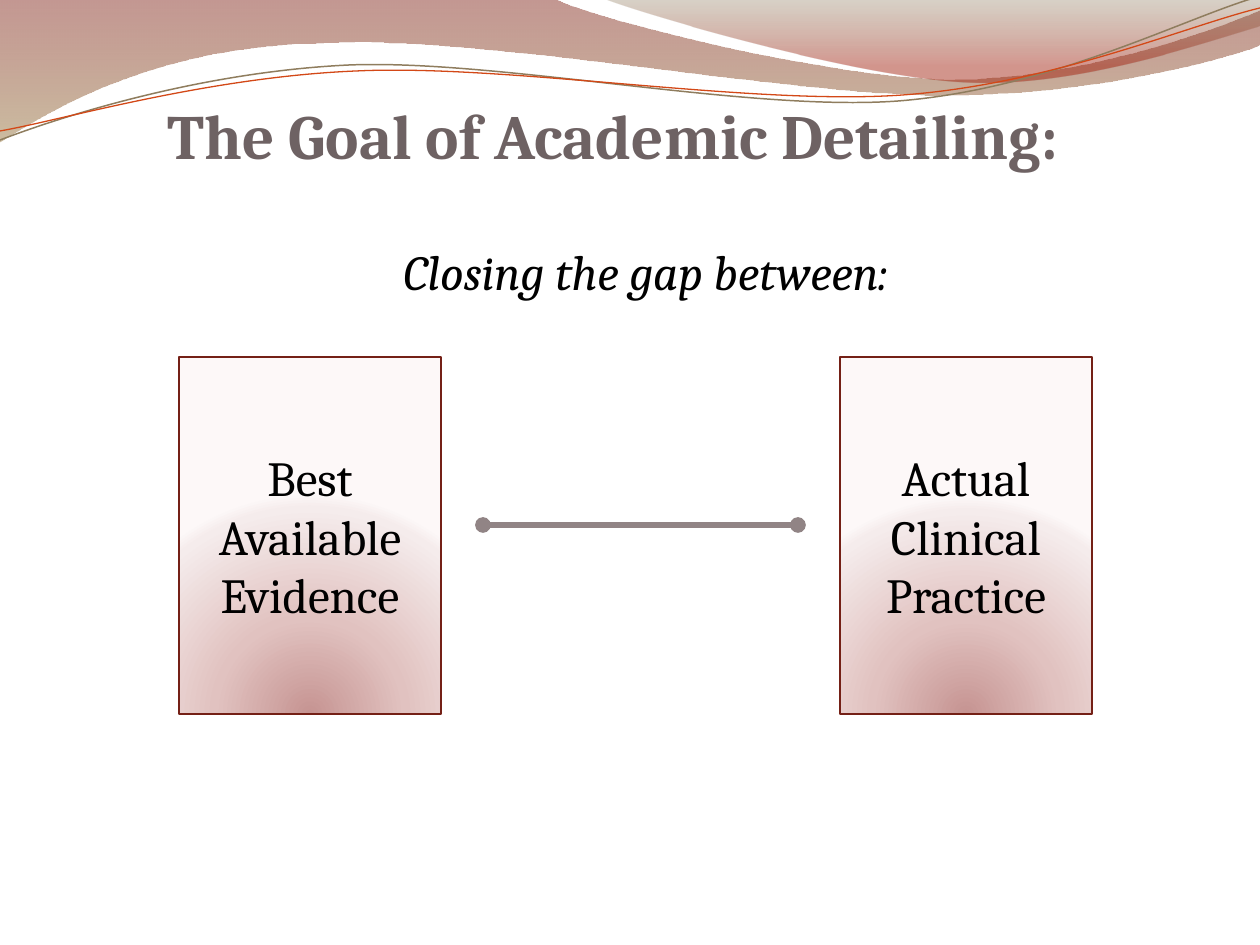
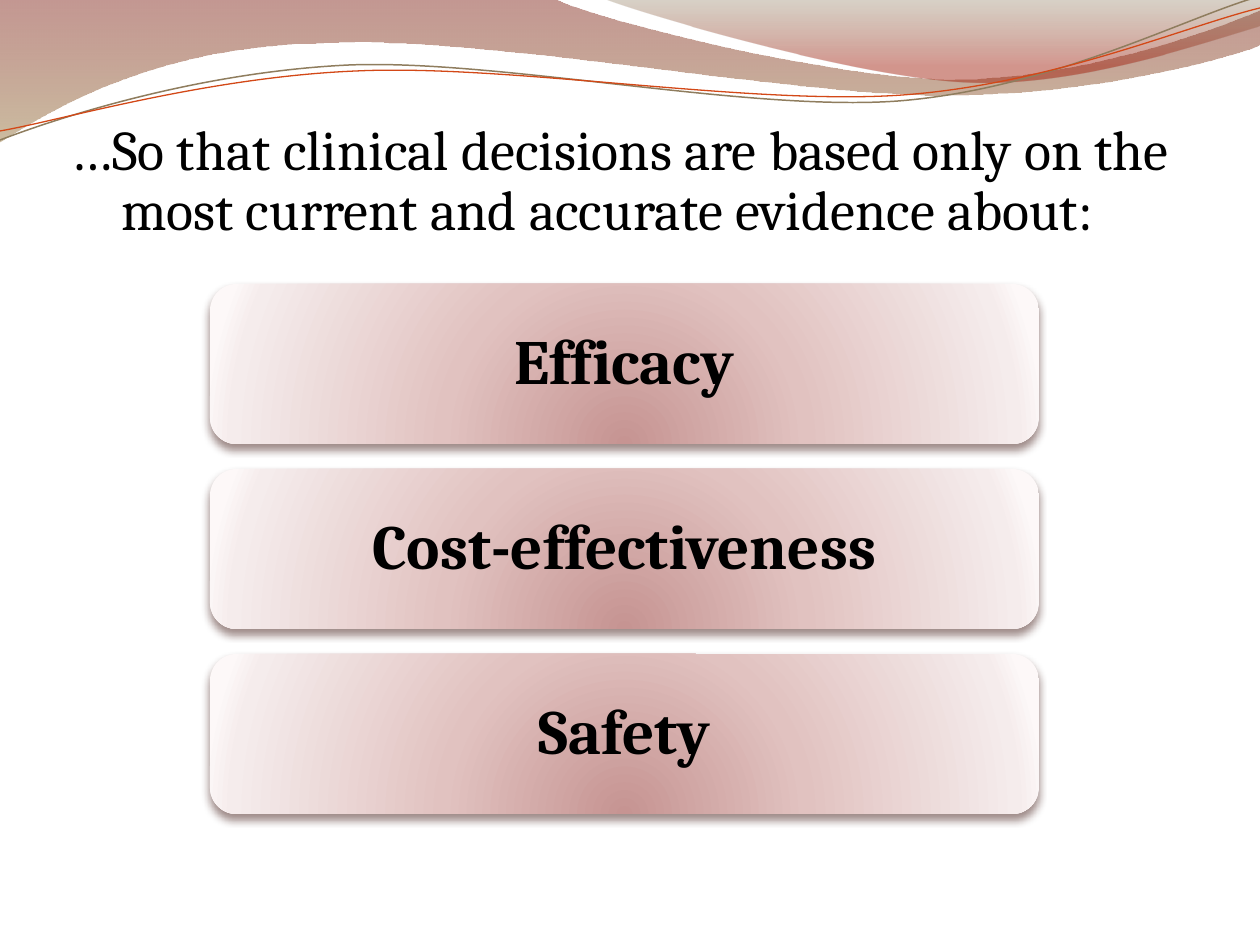
from pptx import Presentation
from pptx.dml.color import RGBColor
from pptx.enum.shapes import MSO_CONNECTOR, MSO_SHAPE
from pptx.enum.text import MSO_ANCHOR, PP_ALIGN
from pptx.oxml import parse_xml
from pptx.oxml.ns import nsdecls, qn
from pptx.util import Emu, Pt

RECTANGLE, ROUNDED = MSO_SHAPE.RECTANGLE, MSO_SHAPE.ROUNDED_RECTANGLE
STRAIGHT = MSO_CONNECTOR.STRAIGHT
LEFT, CENTER = PP_ALIGN.LEFT, PP_ALIGN.CENTER
TOP, MIDDLE, BOTTOM = MSO_ANCHOR.TOP, MSO_ANCHOR.MIDDLE, MSO_ANCHOR.BOTTOM

# Content
GOAL = {
    "title": "The Goal of Academic Detailing:",
    "lead": "Closing the gap between: ",
    "sides": [  # text, left, width
        ("Best Available Evidence", 179, 262),
        ("Actual Clinical Practice", 840, 252),
    ],
}
DECISIONS = {
    "lead": "…So that clinical decisions are based only on the "
            "most current and accurate evidence about: ",
    "topics": ["Efficacy", "Cost-effectiveness", "Safety"],
}

# Theme: colours, type, gradients as (position %, colour, opacity %)
THEME = {
    "font": "Cambria",
    "title": {"size": Pt(36), "bold": True, "color": "6E6263"},
    "subtitle": {"size": Pt(28), "italic": True, "color": "000000"},
    "lead": {"size": Pt(32), "color": "000000"},
    "side": {"size": Pt(28), "color": "000000"},
    "topic": {"size": Pt(36), "bold": True, "color": "000000"},
    "outline": "742016",
    "gap": "918485",
    "shadow": ("370F0A", 48),
    "glow": [(0, "C69492", 100), (43, "E1C2C0", 100),
             (93, "F5ECEC", 100), (100, "FDF8F8", 100)],
    "wide_wave": [(0, "7C1A0E", 45), (100, "A18552", 55)],
    "corner_wave": [(0, "7E6B48", 30), (80, "9F1705", 45)],
}
DOWNWARD = '<a:lin ang="5400000" scaled="1"/>'
FROM_BASE = ('<a:path path="circle"><a:fillToRect l="50000" t="130000" '
             'r="50000" b="-30000"/></a:path>')

# Waves: a start point, then segments of one point (line) or three (curve)
WAVES = [
    ("wide_wave", (0, 0), [
        [(554, -1)],
        [(600, 21), (837, 79), (955, 79)],
        [(1075, 79), (1207, 33), (1260, 11)],
        [(1261, 45)],
        [(1239, 55), (1096, 96), (940, 95)],
        [(784, 95), (481, 35), (324, 43)],
        [(163, 45), (58, 105), (-1, 142)],
    ]),
    ("corner_wave", (604, -1), [
        [(641, 14), (859, 78), (969, 82)],
        [(1079, 87), (1211, 40), (1260, 26)],
        [(1260, 0)],
    ]),
]
STRANDS = [
    ("8F7D5E", 0.85, (0, 140), [
        [(60, 117), (199, 72), (349, 65)],
        [(498, 59), (747, 112), (898, 101)],
        [(1050, 89), (1182, 19), (1257, -3)],
    ]),
    ("D34817", 0.75, (0, 131), [
        [(59, 121), (207, 77), (357, 71)],
        [(508, 64), (752, 106), (903, 95)],
        [(1053, 84), (1186, 26), (1260, 8)],
    ]),
]

# Layout in px
PX = 914400 / 126
SLIDE_W, SLIDE_H = 1260, 945
SIDE_TOP, SIDE_H = 357, 357
GAP_LEFT, GAP_RIGHT, GAP_Y = 483, 798, 525
TOPIC_LEFT, TOPIC_TOP, TOPIC_W, TOPIC_H, TOPIC_PITCH = 210, 284, 829, 160, 185


def px(value):
    return Emu(round(value * PX))


def rgb(color):
    return RGBColor.from_string(color)


def color_xml(color, opacity):
    return f'<a:srgbClr val="{color}"><a:alpha val="{opacity * 1000}"/></a:srgbClr>'


def fill_gradient(shape, stops, direction):
    shape.fill.background()
    stop_xml = "".join(f'<a:gs pos="{position * 1000}">{color_xml(color, opacity)}</a:gs>'
                       for position, color, opacity in stops)
    properties = shape._element.spPr
    properties.replace(properties.find(qn("a:noFill")), parse_xml(
        f'<a:gradFill {nsdecls("a")} rotWithShape="1"><a:gsLst>{stop_xml}</a:gsLst>'
        f'{direction}</a:gradFill>'))


def add_shadow(shape):
    shape._element.spPr.find(qn("a:effectLst")).append(parse_xml(
        f'<a:outerShdw {nsdecls("a")} blurRad="{Pt(4.5)}" dist="{Pt(3)}" dir="5400000" '
        f'rotWithShape="0">{color_xml(*THEME["shadow"])}</a:outerShdw>'))


def write(shape, text, style, align=CENTER, anchor=MIDDLE, spacing=1.0,
          insets=(13, 6, 13, 6), indent=0):
    frame = shape.text_frame
    left, top, right, bottom = map(px, insets)
    layout = {"word_wrap": True, "vertical_anchor": anchor, "margin_left": left,
              "margin_top": top, "margin_right": right, "margin_bottom": bottom}
    for name, value in layout.items():
        setattr(frame, name, value)
    paragraph = frame.paragraphs[0]
    paragraph.alignment, paragraph.line_spacing = align, spacing
    if indent:
        paragraph._p.get_or_add_pPr().set("indent", str(px(indent)))
    run = paragraph.add_run()
    run.text = text
    run.font.name = THEME["font"]
    for name, value in THEME[style].items():
        if name == "color":
            run.font.color.rgb = rgb(value)
        else:
            setattr(run.font, name, value)


def add_text(slide, box, text, style, **format_values):
    write(slide.shapes.add_textbox(*map(px, box)), text, style, **format_values)


def add_panel(slide, kind, box):
    panel = slide.shapes.add_shape(kind, *map(px, box))
    panel.shadow.inherit = False
    fill_gradient(panel, THEME["glow"], FROM_BASE)
    return panel


def add_outline(slide, start, segments, close):
    """Freeform through the segment ends, with three-point segments bent to curves."""
    ends = [(px(x), px(y)) for x, y in [start] + [segment[-1] for segment in segments]]
    builder = slide.shapes.build_freeform(*ends[0], scale=1.0)
    builder.add_line_segments(ends[1:], close=close)
    outline = builder.convert_to_shape()
    outline.shadow.inherit = False
    lines = list(outline._element.spPr.iter(qn("a:lnTo")))
    for line, segment in zip(lines, segments):
        if len(segment) == 3:
            points = "".join(f'<a:pt x="{px(x) - outline.left}" y="{px(y) - outline.top}"/>'
                             for x, y in segment)
            line.getparent().replace(line, parse_xml(
                f'<a:cubicBezTo {nsdecls("a")}>{points}</a:cubicBezTo>'))
    return outline


def add_backdrop(slide):
    for gradient, start, segments in WAVES:
        wave = add_outline(slide, start, segments, close=True)
        fill_gradient(wave, THEME[gradient], DOWNWARD)
        wave.line.fill.background()
    for color, width, start, segments in STRANDS:
        strand = add_outline(slide, start, segments, close=False)
        strand.fill.background()
        strand.line.color.rgb = rgb(color)
        strand.line.width = Pt(width)


def add_gap_line(slide):
    gap = slide.shapes.add_connector(STRAIGHT, px(GAP_LEFT), px(GAP_Y), px(GAP_RIGHT), px(GAP_Y))
    gap.line.color.rgb = rgb(THEME["gap"])
    gap.line.width = Pt(3)
    properties = gap._element.spPr
    for end in ("headEnd", "tailEnd"):
        properties.find(qn("a:ln")).append(parse_xml(f'<a:{end} {nsdecls("a")} type="oval"/>'))
    properties.append(parse_xml(f'<a:effectLst {nsdecls("a")}/>'))


def build_goal(slide):
    add_text(slide, (168, 73, 1134, 99), GOAL["title"], "title",
             align=LEFT, anchor=BOTTOM, insets=(0, 6, 0, 0))
    add_text(slide, (84, 242, 1134, 126), GOAL["lead"], "subtitle", anchor=TOP, spacing=0.9)
    for text, left, width in GOAL["sides"]:
        side = add_panel(slide, RECTANGLE, (left, SIDE_TOP, width, SIDE_H))
        side.line.color.rgb = rgb(THEME["outline"])
        side.line.width = Pt(0.75)
        write(side, text, "side")
    add_gap_line(slide)


def build_decisions(slide):
    add_text(slide, (53, 116, 1134, 665), DECISIONS["lead"], "lead", anchor=TOP,
             spacing=0.9, insets=(0, 6, 13, 6), indent=13)
    for row, text in enumerate(DECISIONS["topics"]):
        topic = add_panel(slide, ROUNDED,
                          (TOPIC_LEFT, TOPIC_TOP + row * TOPIC_PITCH, TOPIC_W, TOPIC_H))
        topic.line.fill.background()
        add_shadow(topic)
        write(topic, text, "topic", spacing=0.9, insets=(26, 26, 26, 26))


def main():
    deck = Presentation()
    deck.slide_width, deck.slide_height = px(SLIDE_W), px(SLIDE_H)
    for build in (build_goal, build_decisions):
        slide = deck.slides.add_slide(deck.slide_layouts[6])
        add_backdrop(slide)
        build(slide)
    deck.save("out.pptx")


if __name__ == "__main__":
    main()
